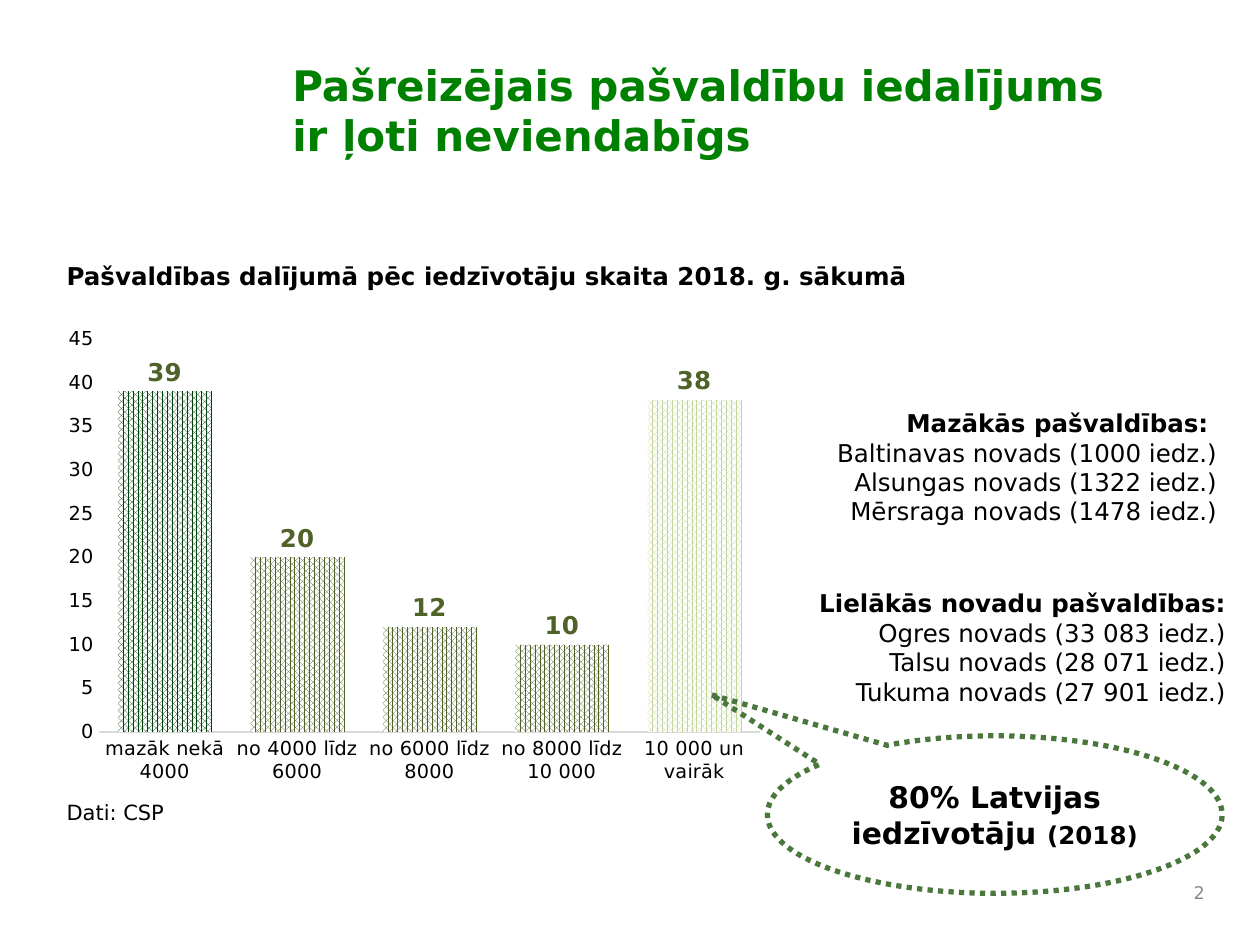
"""Build a slide on how uneven the Latvian municipalities are in size."""
from dataclasses import dataclass

from pptx import Presentation
from pptx.chart.data import CategoryChartData as ChartData
from pptx.dml.color import RGBColor as Rgb
from pptx.enum.chart import XL_CHART_TYPE as Kind, XL_LABEL_POSITION as Spot, XL_TICK_MARK as Tick
from pptx.enum.dml import MSO_LINE as Dash, MSO_PATTERN as Pat
from pptx.enum.shapes import MSO_SHAPE as Form
from pptx.enum.text import MSO_ANCHOR as Anchor, MSO_AUTO_SIZE as Fit, PP_ALIGN as Align
from pptx.util import Inches, Pt

FACE = "DejaVu Sans"
HUES = {
    "title": "008000", "text": "000000", "page": "898989", "axis": "D9D9D9",
    "bar": "4F6228", "small": "02400C", "large": "C3D69B",
    "ring": "4A773C", "back": "FFFFFF",
}
BARS = {
    "mazāk nekā 4000": 39, "no 4000 līdz 6000": 20, "no 6000 līdz 8000": 12,
    "no 8000 līdz 10 000": 10, "10 000 un vairāk": 38,
}


@dataclass
class Note:
    box: tuple
    lines: tuple
    size: float = 14
    heads: int = 0
    hue: str = "text"
    align: Align = Align.LEFT
    anchor: Anchor = Anchor.TOP
    wrap: bool = True


NOTES = (
    Note((9.33, 6.92, 0.33, 0.33), ("2",), 10, hue="page", align=Align.RIGHT, anchor=Anchor.MIDDLE),
    Note((5.76, 3.19, 4, 1.13),
         ("Mazākās pašvaldības: ", "Baltinavas novads (1000 iedz.)",
          "Alsungas novads (1322 iedz.)", "Mērsraga novads (1478 iedz.)"),
         heads=1, align=Align.RIGHT),
    Note((0.43, 2.02, 7.28, 0.33),
         ("Pašvaldības dalījumā pēc iedzīvotāju skaita 2018. g. sākumā",), heads=1),
    Note((6.36, 4.62, 3.47, 1.04),
         ("Lielākās novadu pašvaldības:", "Ogres novads (33 083 iedz.)",
          "Talsu novads (28 071 iedz.)", "Tukuma novads (27 901 iedz.)"),
         heads=1, align=Align.RIGHT),
    Note((0.43, 6.3, 1.02, 0.3), ("Dati: CSP",), 12, wrap=False),
)


def tint(key: str) -> Rgb:
    return Rgb.from_string(HUES[key])


def style(font, size: float, hue: str = "text", bold: bool = False) -> None:
    font.name, font.size, font.bold = FACE, Pt(size), bold
    font.color.rgb = tint(hue)


def write(frame, note: Note) -> None:
    frame.text = "\n".join(note.lines)
    frame.word_wrap = note.wrap
    frame.auto_size = Fit.NONE
    frame.vertical_anchor = note.anchor
    for i, para in enumerate(frame.paragraphs):
        para.alignment = note.align
        for run in para.runs:
            style(run.font, note.size, note.hue, i < note.heads)


def add_title(slide) -> None:
    note = Note((2.22, 0.42, 7.28, 1.13),
                ("Pašreizējais pašvaldību iedalījums", "ir ļoti neviendabīgs"),
                24, 2, "title")
    title = slide.shapes.title
    title.left, title.top, title.width, title.height = map(Inches, note.box)
    write(title.text_frame, note)


def add_note(slide, note: Note) -> None:
    write(slide.shapes.add_textbox(*map(Inches, note.box)).text_frame, note)


def hatch(fill, hue: str) -> None:
    fill.patterned()
    fill.pattern = Pat.PERCENT_75
    fill.fore_color.rgb = tint(hue)
    fill.back_color.rgb = tint("back")


def add_bars(slide) -> None:
    data = ChartData()
    data.categories = list(BARS)
    data.add_series("Series 1", list(BARS.values()))
    box = map(Inches, (0.43, 2.52, 5.72, 3.78))
    chart = slide.shapes.add_chart(Kind.COLUMN_CLUSTERED, *box, data).chart
    chart.has_legend = chart.has_title = False
    style(chart.font, 10)
    chart.font.name = "Times New Roman"

    for axis in (chart.category_axis, chart.value_axis):
        axis.major_tick_mark = axis.minor_tick_mark = Tick.NONE
        axis.has_major_gridlines = False
        style(axis.tick_labels.font, 11)
    line = chart.category_axis.format.line
    line.color.rgb, line.width = tint("axis"), Pt(0.75)
    scale = chart.value_axis
    scale.minimum_scale, scale.maximum_scale, scale.major_unit = 0, 45, 5
    scale.format.line.fill.background()

    plot = chart.plots[0]
    plot.gap_width, plot.overlap, plot.vary_by_categories = 42, -27, False
    bars = plot.series[0]
    hatch(bars.format.fill, "bar")
    for i, hue in ((0, "small"), (4, "large")):
        hatch(bars.points[i].format.fill, hue)
    tags = bars.data_labels
    tags.show_value, tags.position = True, Spot.OUTSIDE_END
    style(tags.font, 14, "bar", True)


def add_call(slide) -> None:
    box = map(Inches, (6.09, 5.84, 3.61, 1.25))
    call = slide.shapes.add_shape(Form.OVAL_CALLOUT, *box)
    call.adjustments[0], call.adjustments[1] = -0.622, -0.76
    call.shadow.inherit = False
    call.fill.background()
    call.line.color.rgb, call.line.width = tint("ring"), Pt(3)
    call.line.dash_style = Dash.ROUND_DOT
    frame = call.text_frame
    frame.word_wrap, frame.vertical_anchor = True, Anchor.MIDDLE
    para = frame.paragraphs[0]
    para.alignment = Align.CENTER
    for text, size in (("80% Latvijas iedzīvotāju ", 17), ("(2018)", 14)):
        run = para.add_run()
        run.text = text
        style(run.font, size, bold=True)


def main() -> None:
    deck = Presentation()
    deck.slide_width, deck.slide_height = Inches(10), Inches(7.5)
    slide = deck.slides.add_slide(deck.slide_layouts[5])
    add_title(slide)
    add_bars(slide)
    for note in NOTES:
        add_note(slide, note)
    add_call(slide)
    deck.save("out.pptx")


if __name__ == "__main__":
    main()
